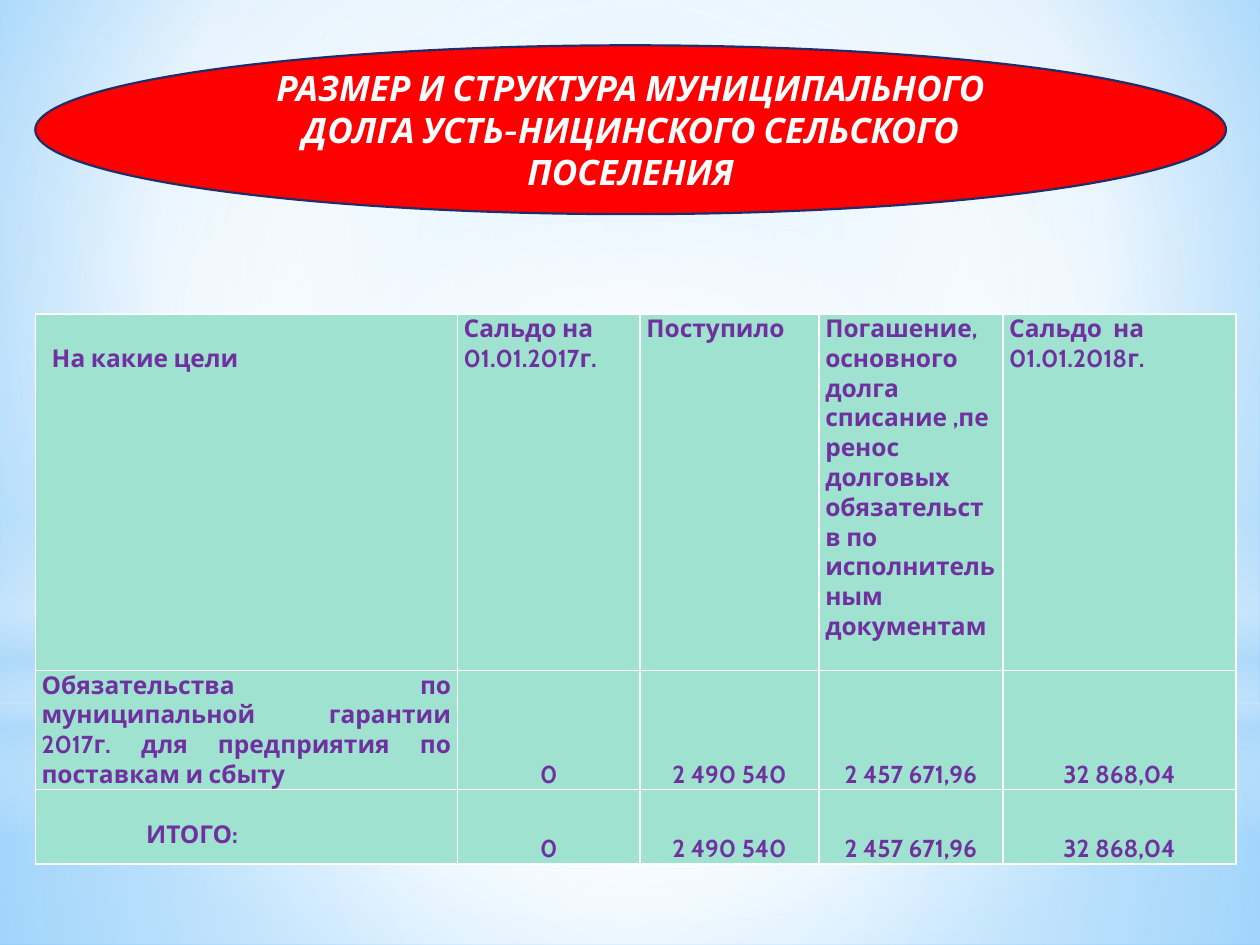
from dataclasses import dataclass
from typing import Optional

from lxml import etree
from pptx import Presentation
from pptx import util as u
from pptx.dml.color import RGBColor
from pptx.enum import shapes, text
from pptx.oxml import parse_xml
from pptx.oxml.ns import nsdecls, qn

WIDTH, HEIGHT = 10, 7.5
FONT = "Cabin"
PURPLE, MINT, WHITE, SKY = "7030A0", "9EE2CF", "FFFFFF", "B4DCFA"
JUSTIFY, LEFT, CENTER = text.PP_ALIGN.JUSTIFY, text.PP_ALIGN.LEFT, text.PP_ALIGN.CENTER
LINE = 0.24  # height of one line of table text, inches
COLUMNS = [3.35, 1.45, 1.42, 1.46, 1.85]
ROWS = [2.83, 0.83, 0.59]


@dataclass
class Gradient:
    """Stops are (position %, colour, opacity %); focus is left, top, right, bottom in %."""
    stops: list[tuple[int, str, int]]
    focus: Optional[tuple[int, int, int, int]] = (50, 50, 50, 50)


@dataclass
class Glow:
    """A background layer, placed by its top and height as shares of the slide."""
    top: float
    height: float
    gradient: Gradient
    shape: shapes.MSO_SHAPE = shapes.MSO_SHAPE.RECTANGLE


@dataclass
class Cell:
    lines: list[str]
    align: text.PP_ALIGN = JUSTIFY
    indent: float = 0
    lines_above: int = 0
    anchor: text.MSO_ANCHOR = text.MSO_ANCHOR.TOP


def amount(value: str) -> Cell:
    return Cell([value], CENTER, anchor=text.MSO_ANCHOR.BOTTOM)


BACKGROUND = Gradient([(0, "9ED5FF", 100), (60, WHITE, 100), (100, "5BB9FF", 100)],
                      (20, 10, 20, 60))
GLOWS = [
    Glow(0.744, 0.256, Gradient([(0, WHITE, 91), (37, WHITE, 76), (100, SKY, 79)])),
    Glow(0, 0.744, Gradient([(0, WHITE, 89), (48, WHITE, 62), (100, SKY, 79)])),
    Glow(0.55, 0.333, Gradient([(0, WHITE, 0), (29, WHITE, 30), (45, SKY, 40),
                                (55, WHITE, 26), (65, SKY, 60), (100, WHITE, 0)], None)),
    Glow(0.233, 0.744, Gradient([(0, WHITE, 100), (56, WHITE, 0)]),
         shapes.MSO_SHAPE.OVAL),
]
DEBT = [
    [Cell(["На какие цели"], indent=0.08, lines_above=1),
     Cell(["Сальдо на", "01.01.2017г."]),
     Cell(["Поступило"], LEFT),
     Cell(["Погашение, основного долга списание ,перенос долговых "
           "обязательств по исполнительным документам"], LEFT),
     Cell(["Сальдо  на", "01.01.2018г."])],
    [Cell(["Обязательства по муниципальной гарантии 2017г. "
           "для предприятия по поставкам и сбыту"]),
     *map(amount, ["0", "2 490 540", "2 457 671,96", "32 868,04"])],
    [Cell(["ИТОГО:"], indent=0.83, lines_above=1),
     *map(amount, ["0", "2 490 540", "2 457 671,96", "32 868,04"])],
]


def rgb(colour: str) -> RGBColor:
    return RGBColor.from_string(colour)


def apply_gradient(fill, properties: etree._Element, gradient: Gradient) -> None:
    """Swap the solid fill inside the given properties element for a gradient."""
    fill.solid()
    stops = "".join(
        f'<a:gs pos="{pos * 1000}"><a:srgbClr val="{colour}">'
        f'<a:alpha val="{opacity * 1000}"/></a:srgbClr></a:gs>'
        for pos, colour, opacity in gradient.stops)
    if gradient.focus:
        edges = " ".join(f'{side}="{share * 1000}"'
                         for side, share in zip("ltrb", gradient.focus))
        shading = f'<a:path path="circle"><a:fillToRect {edges}/></a:path>'
    else:
        shading = '<a:lin ang="5400000" scaled="0"/>'
    xml = (f'<a:gradFill {nsdecls("a")} rotWithShape="1">'
           f'<a:gsLst>{stops}</a:gsLst>{shading}</a:gradFill>')
    properties.replace(properties.find(qn("a:solidFill")), parse_xml(xml))


def write(p, content: str, *, size: float, colour: str, align: text.PP_ALIGN,
          italic: bool = False) -> None:
    p.alignment = align
    r = p.add_run()
    r.text = content
    r.font.name, r.font.size = FONT, u.Pt(size)
    r.font.bold, r.font.italic = True, italic
    r.font.color.rgb = rgb(colour)


def draw_background(s) -> None:
    fill = s.background.fill
    fill.solid()
    apply_gradient(fill, s.element.find(".//" + qn("p:bgPr")), BACKGROUND)
    for glow in GLOWS:
        sp = s.shapes.add_shape(glow.shape, 0, u.Inches(glow.top * HEIGHT),
                                u.Inches(WIDTH), u.Inches(glow.height * HEIGHT))
        sp.shadow.inherit = False
        sp.line.fill.background()
        apply_gradient(sp.fill, sp.element.spPr, glow.gradient)


def draw_borders(cell) -> None:
    tc_pr = cell._tc.get_or_add_tcPr()
    for i, side in enumerate("LRTB"):
        tc_pr.insert(i, parse_xml(
            f'<a:ln{side} {nsdecls("a")} w="12700"><a:solidFill>'
            f'<a:srgbClr val="{WHITE}"/></a:solidFill></a:ln{side}>'))


def fill_cell(cell, content: Cell) -> None:
    cell.fill.solid()
    cell.fill.fore_color.rgb = rgb(MINT)
    cell.margin_left = u.Inches(0.05 + content.indent)
    cell.margin_right = u.Inches(0.05)
    cell.margin_top = u.Inches(content.lines_above * LINE)
    cell.margin_bottom = 0
    cell.vertical_anchor = content.anchor
    tf = cell.text_frame
    for i, line in enumerate(content.lines):
        p = tf.add_paragraph() if i else tf.paragraphs[0]
        write(p, line, size=14, colour=PURPLE, align=content.align)
    draw_borders(cell)


def draw_debt_table(s) -> None:
    table = s.shapes.add_table(len(ROWS), len(COLUMNS), u.Inches(0.28), u.Inches(2.49),
                               u.Inches(sum(COLUMNS)), u.Inches(sum(ROWS))).table
    table.first_row = table.horz_banding = False
    for column, width in zip(table.columns, COLUMNS):
        column.width = u.Inches(width)
    for row, height, contents in zip(table.rows, ROWS, DEBT):
        row.height = u.Inches(height)
        for cell, content in zip(row.cells, contents):
            fill_cell(cell, content)


def draw_title(s) -> None:
    sp = s.shapes.add_shape(shapes.MSO_SHAPE.OVAL, u.Inches(0.28), u.Inches(0.36),
                            u.Inches(9.45), u.Inches(1.34))
    sp.shadow.inherit = False
    sp.fill.solid()
    sp.fill.fore_color.rgb = rgb("FF0000")
    sp.line.color.rgb = rgb("1F2E69")
    sp.line.width = u.Pt(1.25)
    tf = sp.text_frame
    tf.word_wrap = True
    tf.vertical_anchor = text.MSO_ANCHOR.MIDDLE
    write(tf.paragraphs[0], "РАЗМЕР И СТРУКТУРА МУНИЦИПАЛЬНОГО ДОЛГА "
          "УСТЬ-НИЦИНСКОГО СЕЛЬСКОГО ПОСЕЛЕНИЯ",
          size=20, colour=WHITE, align=CENTER, italic=True)


def main() -> None:
    prs = Presentation()
    prs.slide_width, prs.slide_height = u.Inches(WIDTH), u.Inches(HEIGHT)
    s = prs.slides.add_slide(prs.slide_layouts[6])
    draw_background(s)
    draw_debt_table(s)
    draw_title(s)
    prs.save("out.pptx")


if __name__ == "__main__":
    main()
